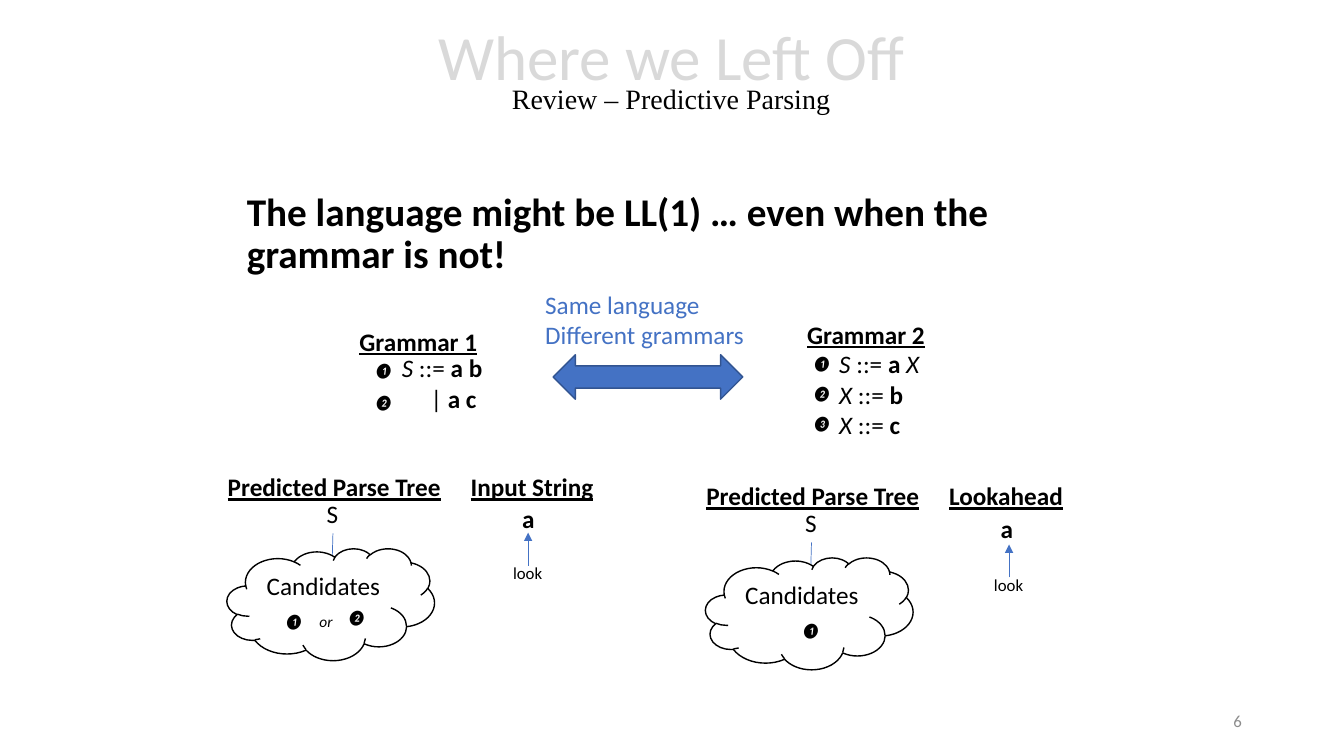
from pptx import Presentation
from pptx.dml.color import RGBColor
from pptx.enum.shapes import MSO_CONNECTOR, MSO_SHAPE
from pptx.enum.text import MSO_ANCHOR, MSO_AUTO_SIZE, PP_ALIGN
from pptx.oxml.ns import qn
from pptx.util import Cm, Pt
from lxml.etree import SubElement

BLACK, BLUE, NAVY, WHITE = "000000", "4472C4", "325491", "FFFFFF"
LIGHT_GREY, GREY = "D9D9D9", "8C8C8C"


def rgb(value):
    return RGBColor.from_string(value)


class SlideBuilder:
    font_name = "Calibri"

    def __init__(self, slide):
        self.slide = slide

    def set_font(self, font, size, color=BLACK, name=None):
        font.name = name or self.font_name
        font.size = Pt(size)
        font.color.rgb = rgb(color)

    def set_style(self, font, style):
        if "b" in style:
            font.bold = True
        if "i" in style:
            font.italic = True
        if "u" in style:
            font.underline = True

    def text_box(self, x, y, width, height):
        return self.slide.shapes.add_textbox(Cm(x), Cm(y), Cm(width), Cm(height)).text_frame

    def title(self, heading, subtitle, x, y, width, height):
        frame = self.text_box(x, y, width, height)
        frame.word_wrap = True
        frame.vertical_anchor = MSO_ANCHOR.MIDDLE
        paragraph = frame.paragraphs[0]
        paragraph.alignment = PP_ALIGN.CENTER
        paragraph.line_spacing = 0.7
        heading_run = paragraph.add_run()
        heading_run.text = heading
        self.set_font(heading_run.font, 45, LIGHT_GREY)
        paragraph.add_line_break()
        subtitle_run = paragraph.add_run()
        subtitle_run.text = subtitle
        self.set_font(subtitle_run.font, 20, name="Times New Roman")

    def statement(self, text, x, y, width, height):
        frame = self.text_box(x, y, width, height)
        frame.word_wrap = True
        paragraph = frame.paragraphs[0]
        paragraph.text = text
        paragraph.line_spacing = 0.9
        paragraph.space_before = Pt(10)
        self.set_font(paragraph.font, 28)
        paragraph.font.bold = True

    def page_number(self, number, x, y, width, height):
        frame = self.text_box(x, y, width, height)
        frame.vertical_anchor = MSO_ANCHOR.MIDDLE
        frame.word_wrap = True
        paragraph = frame.paragraphs[0]
        paragraph.text = number
        paragraph.alignment = PP_ALIGN.RIGHT
        self.set_font(paragraph.font, 12, GREY)

    def label(self, lines, x, y, width, height=1.02, size=18, style="", color=BLACK):
        frame = self.text_box(x, y, width, height)
        frame.word_wrap = False
        frame.auto_size = MSO_AUTO_SIZE.SHAPE_TO_FIT_TEXT
        frame.text = lines
        for paragraph in frame.paragraphs:
            self.set_font(paragraph.font, size, color)
            self.set_style(paragraph.font, style)

    def marker(self, symbol, x, y, width=1.04):
        self.label(symbol, x, y, width, 0.74, 11, "i")

    def rules(self, rules, x, y, width, height):
        frame = self.text_box(x, y, width, height)
        frame.word_wrap = False
        frame.auto_size = MSO_AUTO_SIZE.SHAPE_TO_FIT_TEXT
        for index, (indent, parts) in enumerate(rules):
            paragraph = frame.add_paragraph() if index else frame.paragraphs[0]
            self.set_font(paragraph.font, 18)
            if indent:
                properties = paragraph.font._element.getparent()
                properties.set("marL", str(Cm(indent)))
                properties.set("indent", "0")
            for text, style in parts:
                run = paragraph.add_run()
                run.text = text
                self.set_style(run.font, style)

    def shape(self, kind, x, y, width, height, fill, line, text=""):
        shape = self.slide.shapes.add_shape(kind, Cm(x), Cm(y), Cm(width), Cm(height))
        shape.shadow.inherit = False
        shape.fill.solid()
        shape.fill.fore_color.rgb = rgb(fill)
        shape.line.color.rgb = rgb(line)
        shape.line.width = Pt(1)
        if text:
            frame = shape.text_frame
            frame.word_wrap = False
            frame.vertical_anchor = MSO_ANCHOR.TOP
            paragraph = frame.paragraphs[0]
            paragraph.text = text
            paragraph.alignment = PP_ALIGN.CENTER
            self.set_font(paragraph.font, 18)

    def line(self, x1, y1, x2, y2, arrow=False):
        connector = self.slide.shapes.add_connector(
            MSO_CONNECTOR.STRAIGHT, Cm(x1), Cm(y1), Cm(x2), Cm(y2))
        connector.line.color.rgb = rgb(BLUE)
        connector.line.width = Pt(0.5)
        if arrow:
            SubElement(connector.line._get_or_add_ln(), qn("a:tailEnd"), type="triangle")
        SubElement(connector._element.spPr, qn("a:effectLst"))

    def parse_state(self, x, y, input_heading, heading_width, candidates, look_x, look_y):
        self.label("Predicted Parse Tree", x, y, 5.92, style="bu")
        self.label(input_heading, x + 6.12, y, heading_width, style="bu")
        self.label("S", x + 2.49, y + 0.66, 0.81)
        self.line(x + 2.9, y + 1.68, x + 2.87, y + 2.79)
        self.shape(MSO_SHAPE.CLOUD, x + 0.23, y + 2.06, 5.23, 2.82, WHITE, BLACK, "Candidates")
        for symbol, dx, dy, width in candidates:
            self.marker(symbol, x + dx, y + dy, width)
        self.label("a", x + 7.42, y + 0.81, 0.84, style="b")
        self.line(look_x, look_y, look_x, look_y - 0.83, arrow=True)
        self.label("look", look_x - 0.63, look_y - 0.2, 1.27, 0.76, 12)


def main():
    presentation = Presentation()
    presentation.slide_width = Cm(33.87)
    presentation.slide_height = Cm(19.05)
    review = SlideBuilder(presentation.slides.add_slide(presentation.slide_layouts[6]))

    review.title("Where we Left Off", "Review – Predictive Parsing", 5.97, 0.08, 21.89, 3.68)
    review.statement("The language might be LL(1) … even when the grammar is not!",
                     5.97, 4.72, 21.89, 12.09)
    review.page_number("6", 23.93, 17.65, 7.62, 1.02)

    review.parse_state(5.49, 11.76, "Input String", 3.63,
                       [("❶", 1.42, 3.53, 1.04), ("❷", 3, 3.45, 0.89), ("or", 2.31, 3.53, 0.89)],
                       13.31, 14.25)
    review.parse_state(17.55, 11.99, "Lookahead", 3.4, [("❶", 2.39, 3.53, 1.04)], 25.43, 14.55)

    review.label("Grammar 1", 8.81, 8.1, 3.51, style="bu")
    review.rules([
        (0, [("S", "i"), (" ::= ", ""), ("a b", "b")]),
        (0.72, [("|", ""), (" a c", "b")]),
    ], 9.88, 8.76, 2.72, 1.8)
    for symbol, y, width in [("❶", 8.97, 1.04), ("❷", 9.78, 0.89)]:
        review.marker(symbol, 9.17, y, width)

    review.label("Grammar 2", 20.09, 7.92, 3.51, style="bu")
    review.rules([
        (0, [("S", "i"), (" ::= ", ""), ("a ", "b"), ("X", "i")]),
        (0, [("X", "i"), (" ::=", ""), (" b", "b")]),
        (0, [("X", "i"), (" ::=", ""), (" c", "b")]),
    ], 20.9, 8.66, 2.54, 2.57)
    for index, symbol in enumerate("❶❷❸"):
        review.marker(symbol, 20.22, 8.81 + 0.75 * index)

    review.shape(MSO_SHAPE.LEFT_RIGHT_ARROW, 13.94, 8.94, 4.78, 1.12, BLUE, NAVY)
    review.label("Same language\nDifferent grammars", 13.49, 7.16, 5.59, 1.8, color=BLUE)

    presentation.save("out.pptx")


if __name__ == "__main__":
    main()
